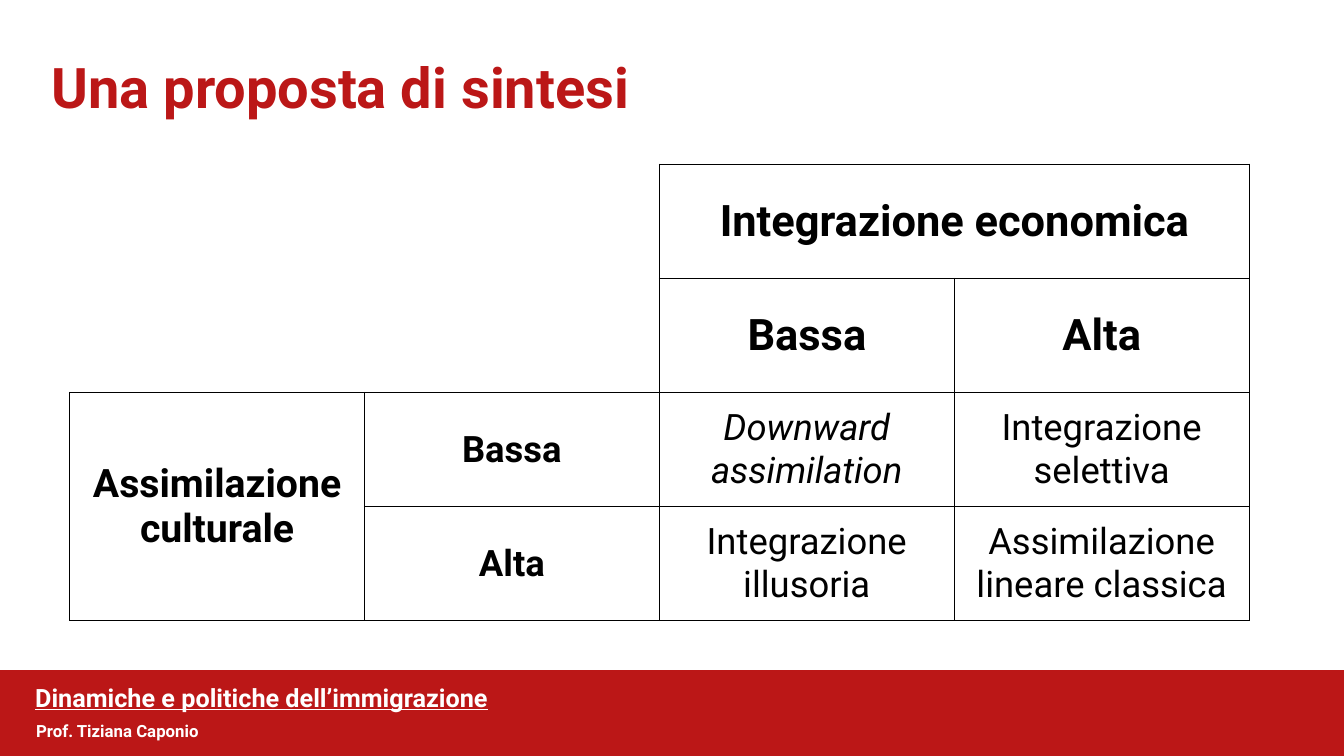
from dataclasses import dataclass

from lxml.etree import SubElement
from pptx import Presentation
from pptx.dml.color import RGBColor
from pptx.enum.shapes import MSO_SHAPE
from pptx.enum.text import MSO_ANCHOR as Anchor, PP_ALIGN as Align
from pptx.oxml.ns import qn
from pptx.util import Inches, Pt

WIDE, HIGH = Inches(13.33), Inches(7.5)
COLORS = {"red": "BB1717", "white": "FFFFFF", "black": "000000"}
FONT = "Roboto"
SIDE = 4
SPLIT = 2  # rows and columns taken by the headings


@dataclass
class Box:
    """Place in percent of the slide's width and height."""
    x: float
    y: float
    w: float
    h: float

    def emu(self) -> tuple:
        return (int(WIDE * self.x / 100), int(HIGH * self.y / 100),
                int(WIDE * self.w / 100), int(HIGH * self.h / 100))


@dataclass
class Label:
    text: str
    box: Box
    size: int
    line: bool = False


@dataclass
class Entry:
    row: int
    col: int
    text: str
    size: int = 26
    bold: bool = False
    slant: bool = False
    rows: int = 1
    cols: int = 1


BAR = Box(0, 88.67, 100, 11.33)
TITLE = Box(3.08, 6.27, 96, 10.27)
GRID = Box(5.18, 21.73, 87.77, 60.4)
LABELS = [
    Label("Prof. Tiziana Caponio", Box(1.95, 94.93, 98, 4.93), 12),
    Label("Dinamiche e politiche dell’immigrazione",
          Box(1.88, 90, 98, 4.93), 18, line=True),
]
ENTRIES = [
    Entry(0, 2, "Integrazione economica", 31, True, cols=2),
    Entry(1, 2, "Bassa", 31, True),
    Entry(1, 3, "Alta", 31, True),
    Entry(2, 0, "Assimilazione culturale", 28, True, rows=2),
    Entry(2, 1, "Bassa", bold=True),
    Entry(3, 1, "Alta", bold=True),
    Entry(2, 2, "Downward assimilation", slant=True),
    Entry(2, 3, "Integrazione selettiva"),
    Entry(3, 2, "Integrazione illusoria"),
    Entry(3, 3, "Assimilazione lineare classica"),
]


def tint(name: str) -> RGBColor:
    return RGBColor.from_string(COLORS[name])


def style(para, size: int, color: str, bold: bool = True) -> None:
    font = para.runs[0].font
    font.name, font.size, font.bold = FONT, Pt(size), bold
    font.color.rgb = tint(color)


def add_bar(slide) -> None:
    bar = slide.shapes.add_shape(MSO_SHAPE.RECTANGLE, *BAR.emu())
    bar.shadow.inherit = False
    bar.fill.solid()
    bar.fill.fore_color.rgb = tint("red")
    bar.line.color.rgb = tint("red")
    bar.line.width = Pt(1)


def set_title(slide, text: str) -> None:
    title = slide.shapes.title
    title.left, title.top, title.width, title.height = TITLE.emu()
    frame = title.text_frame
    frame.text = text
    frame.vertical_anchor = Anchor.MIDDLE
    para = frame.paragraphs[0]
    para.alignment = Align.LEFT
    style(para, 40, "red")


def add_label(slide, label: Label) -> None:
    frame = slide.shapes.add_textbox(*label.box.emu()).text_frame
    frame.word_wrap = True
    frame.text = label.text
    para = frame.paragraphs[0]
    para.line_spacing = 0.9
    style(para, label.size, "white")
    para.runs[0].font.underline = label.line


def set_edges(cell, row: int, col: int) -> None:
    """Rule every side that touches a cell outside the blank corner."""
    full = row >= SPLIT or col >= SPLIT
    shown = {"L": full, "R": full or col == SPLIT - 1,
             "T": full, "B": full or row == SPLIT - 1}
    props = cell._tc.get_or_add_tcPr()
    for spot, (side, drawn) in enumerate(shown.items()):
        edge = SubElement(props, qn(f"a:ln{side}"), w=str(Pt(1)))
        if drawn:
            fill = SubElement(edge, qn("a:solidFill"))
            SubElement(fill, qn("a:srgbClr"), val=COLORS["black"])
        else:
            SubElement(edge, qn("a:noFill"))
        props.insert(spot, edge)


def add_grid(slide) -> None:
    table = slide.shapes.add_table(SIDE, SIDE, *GRID.emu()).table
    table.first_row = table.horz_banding = False
    for row in range(SIDE):
        for col in range(SIDE):
            cell = table.cell(row, col)
            cell.fill.solid()
            cell.fill.fore_color.rgb = tint("white")
            set_edges(cell, row, col)
    for item in ENTRIES:
        cell = table.cell(item.row, item.col)
        if item.rows * item.cols > 1:
            cell.merge(table.cell(item.row + item.rows - 1,
                                  item.col + item.cols - 1))
        cell.text_frame.text = item.text
        cell.vertical_anchor = Anchor.MIDDLE
        para = cell.text_frame.paragraphs[0]
        para.alignment = Align.CENTER
        style(para, item.size, "black", item.bold)
        para.runs[0].font.italic = item.slant


def main() -> None:
    deck = Presentation()
    deck.slide_width, deck.slide_height = WIDE, HIGH
    slide = deck.slides.add_slide(deck.slide_layouts[5])
    add_bar(slide)
    set_title(slide, "Una proposta di sintesi")
    for label in LABELS:
        add_label(slide, label)
    add_grid(slide)
    deck.save("out.pptx")


if __name__ == "__main__":
    main()
